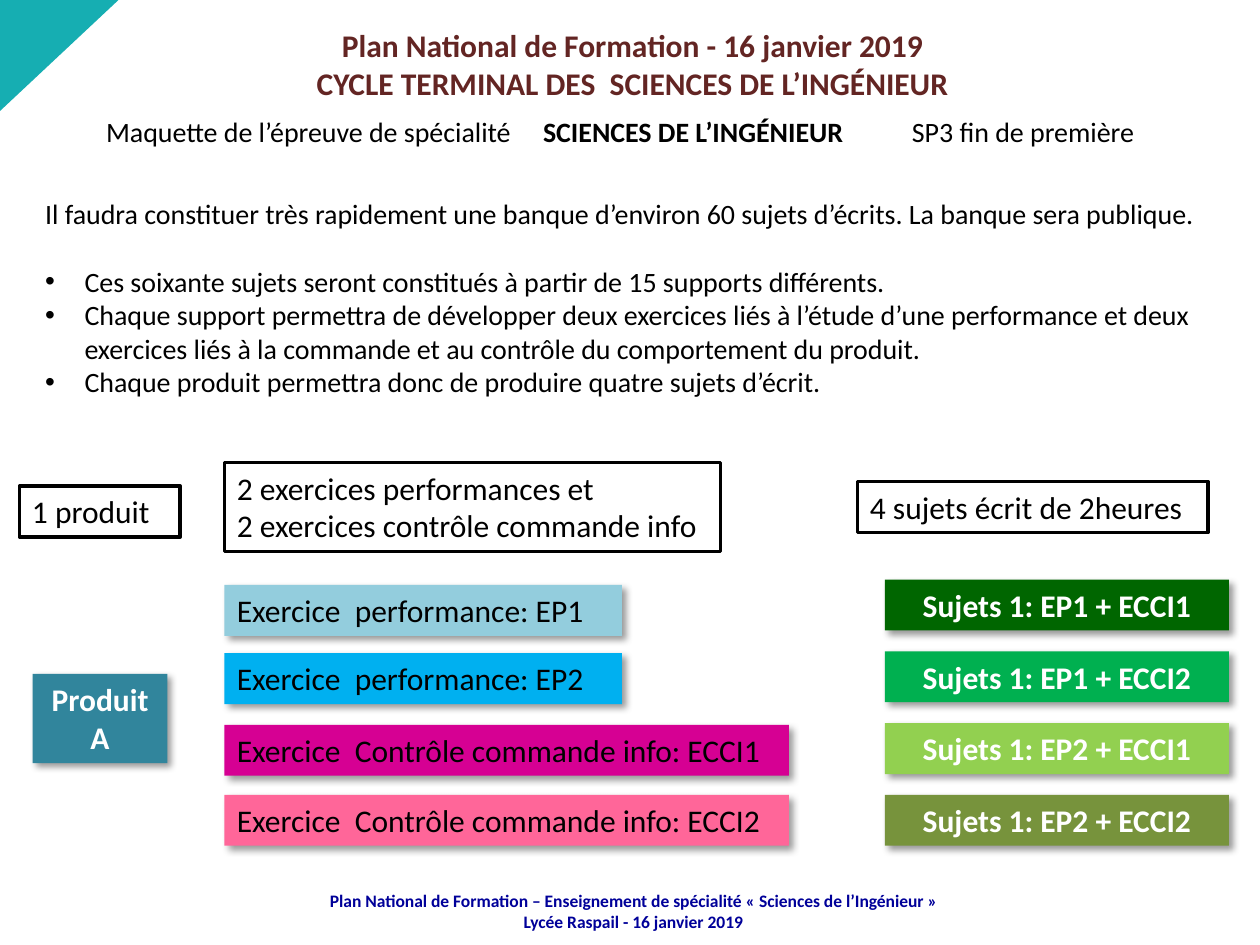
from lxml import etree
from pptx import Presentation
from pptx.dml.color import RGBColor
from pptx.enum.shapes import MSO_SHAPE
from pptx.enum.text import MSO_ANCHOR, MSO_AUTO_SIZE, PP_ALIGN
from pptx.oxml import parse_xml
from pptx.oxml.ns import nsdecls, qn
from pptx.util import Pt

RECTANGLE = MSO_SHAPE.RECTANGLE
TRIANGLE = MSO_SHAPE.ISOSCELES_TRIANGLE
LEFT = PP_ALIGN.LEFT
CENTER = PP_ALIGN.CENTER
TOP = MSO_ANCHOR.TOP
MIDDLE = MSO_ANCHOR.MIDDLE
GROW = MSO_AUTO_SIZE.SHAPE_TO_FIT_TEXT
ROW_HEIGHT = 29.1
SHADOW = (
    f'<a:outerShdw {nsdecls("a")} blurRad="50800" dist="38100" dir="2700000" algn="tl" rotWithShape="0">'
    '<a:srgbClr val="000000"><a:alpha val="40000"/></a:srgbClr></a:outerShdw>'
)


def color(value):
    return RGBColor.from_string(value)


def add_text(box, lines, size, text_color, bold=False, alignment=LEFT):
    frame = box.text_frame
    frame.word_wrap = True
    frame.auto_size = GROW
    frame.vertical_anchor = TOP
    for index, line in enumerate(lines):
        paragraph = frame.paragraphs[0] if index == 0 else frame.add_paragraph()
        paragraph.text = line
        paragraph.alignment = alignment
        paragraph.font.name = "Calibri"
        paragraph.font.size = Pt(size)
        paragraph.font.bold = bold
        paragraph.font.color.rgb = color(text_color)
    return frame


presentation = Presentation()
presentation.slide_width = Pt(720)
presentation.slide_height = Pt(540)
slide = presentation.slides.add_slide(presentation.slide_layouts[6])
shapes = slide.shapes

corner = shapes.add_shape(TRIANGLE, Pt(0), Pt(0), Pt(67.7), Pt(63.4))
corner.adjustments[0] = 1
corner.rotation = 180
corner.shadow.inherit = False
corner.fill.solid()
corner.fill.fore_color.rgb = color("16AEB2")
corner.line.fill.background()

footer = shapes.add_textbox(Pt(171.4), Pt(506.2), Pt(380.9), Pt(28.8))
footer_lines = [
    "Plan National de Formation – Enseignement de spécialité «\u00a0Sciences de l’Ingénieur\u00a0»",
    "Lycée Raspail - 16 janvier 2019",
]
footer_frame = add_text(footer, footer_lines, 10, "000099", True, CENTER)
footer_frame.auto_size = MSO_AUTO_SIZE.NONE
footer_frame.vertical_anchor = MIDDLE
footer_frame.margin_left = footer_frame.margin_right = 0
footer_frame.margin_top = footer_frame.margin_bottom = 0

title = shapes.add_textbox(Pt(70.6), Pt(11.5), Pt(581.8), Pt(51.1))
title_lines = [
    "Plan National de Formation - 16 janvier 2019",
    "CYCLE TERMINAL DES  SCIENCES DE L’INGÉNIEUR",
]
add_text(title, title_lines, 18, "632523", True, CENTER)

subtitle = shapes.add_textbox(Pt(18.7), Pt(61.9), Pt(671), Pt(26.6))
subtitle_frame = add_text(subtitle, [""], 16, "000000")
subtitle_frame.margin_left = Pt(41.9)
subtitle_paragraph = subtitle_frame.paragraphs[0]
for text, bold in [
    ("Maquette de l’épreuve de spécialité\t", False),
    ("SCIENCES DE L’INGÉNIEUR\t", True),
    ("SP3 fin de première", False),
]:
    run = subtitle_paragraph.add_run()
    run.text = text
    run.font.bold = bold
tab_list = etree.Element(qn("a:tabLst"))
for position in (249.7, 460.5):
    etree.SubElement(tab_list, qn("a:tab"), pos=str(Pt(position)), algn="l")
subtitle_paragraph._p.get_or_add_pPr().insert(0, tab_list)

body = shapes.add_textbox(Pt(18.7), Pt(108.7), Pt(671), Pt(143.3))
body_lines = [
    "Il faudra constituer très rapidement une banque d’environ 60 sujets d’écrits. La banque sera publique.",
    "Ces soixante sujets seront constitués à partir de 15 supports différents.",
    "Chaque support permettra de développer deux exercices liés à l’étude d’une performance et deux "
    "exercices liés à la commande et au contrôle du comportement du produit.",
    "Chaque produit permettra donc de produire quatre sujets d’écrit.",
]
body_frame = add_text(body, body_lines, 16, "000000")
for paragraph in body_frame.paragraphs[1:]:
    properties = paragraph._p.get_or_add_pPr()
    properties.set("marL", str(Pt(22.5)))
    properties.set("indent", str(Pt(-22.5)))
    bullet_font = etree.Element(qn("a:buFont"), typeface="Arial")
    bullet = etree.Element(qn("a:buChar"), char="•")
    properties.insert(0, bullet_font)
    properties.insert(1, bullet)
body_frame.paragraphs[1].space_before = Pt(19.5)

cards = [
    (18.7, 385, 76.9, 51.1, "31859C", "Produit A", True),
    (128.2, 334.2, 227.2, ROW_HEIGHT, "93CDDD", "Exercice  performance: EP1", False),
    (128.2, 373.2, 227.2, ROW_HEIGHT, "00B0F0", "Exercice  performance: EP2", False),
    (128.2, 414.2, 322.6, ROW_HEIGHT, "D60093", "Exercice  Contrôle commande info: ECCI1", False),
    (128.2, 454.2, 322.6, ROW_HEIGHT, "FF6699", "Exercice  Contrôle commande info: ECCI2", False),
]
subjects = [
    ("006600", "EP1 + ECCI1"),
    ("00B050", "EP1 + ECCI2"),
    ("92D050", "EP2 + ECCI1"),
    ("77933C", "EP2 + ECCI2"),
]
for row, (fill, exercises) in enumerate(subjects):
    cards.append((505.7, 331.2 + 41 * row, 196.6, ROW_HEIGHT, fill, f"Sujets 1: {exercises}", True))

for left, top, width, height, fill, text, strong in cards:
    card = shapes.add_shape(RECTANGLE, Pt(left), Pt(top), Pt(width), Pt(height))
    card.fill.solid()
    card.fill.fore_color.rgb = color(fill)
    card.line.fill.background()
    card.shadow.inherit = False
    card.element.spPr.find(qn("a:effectLst")).append(parse_xml(SHADOW))
    add_text(card, [text], 18, "FFFFFF" if strong else "000000", strong, CENTER if strong else LEFT)

headings = [
    (11.2, 277.8, 91.8, ROW_HEIGHT, ["1 produit"]),
    (128.2, 264.2, 283.5, 51.1, ["2 exercices performances et", "2 exercices contrôle commande info"]),
    (490, 275.2, 200.2, ROW_HEIGHT, ["4 sujets écrit de 2heures"]),
]
for left, top, width, height, lines in headings:
    heading = shapes.add_shape(RECTANGLE, Pt(left), Pt(top), Pt(width), Pt(height))
    heading.shadow.inherit = False
    heading.fill.solid()
    heading.fill.fore_color.rgb = color("FFFFFF")
    heading.line.color.rgb = color("000000")
    heading.line.width = Pt(2)
    add_text(heading, lines, 18, "000000")

presentation.save("out.pptx")
